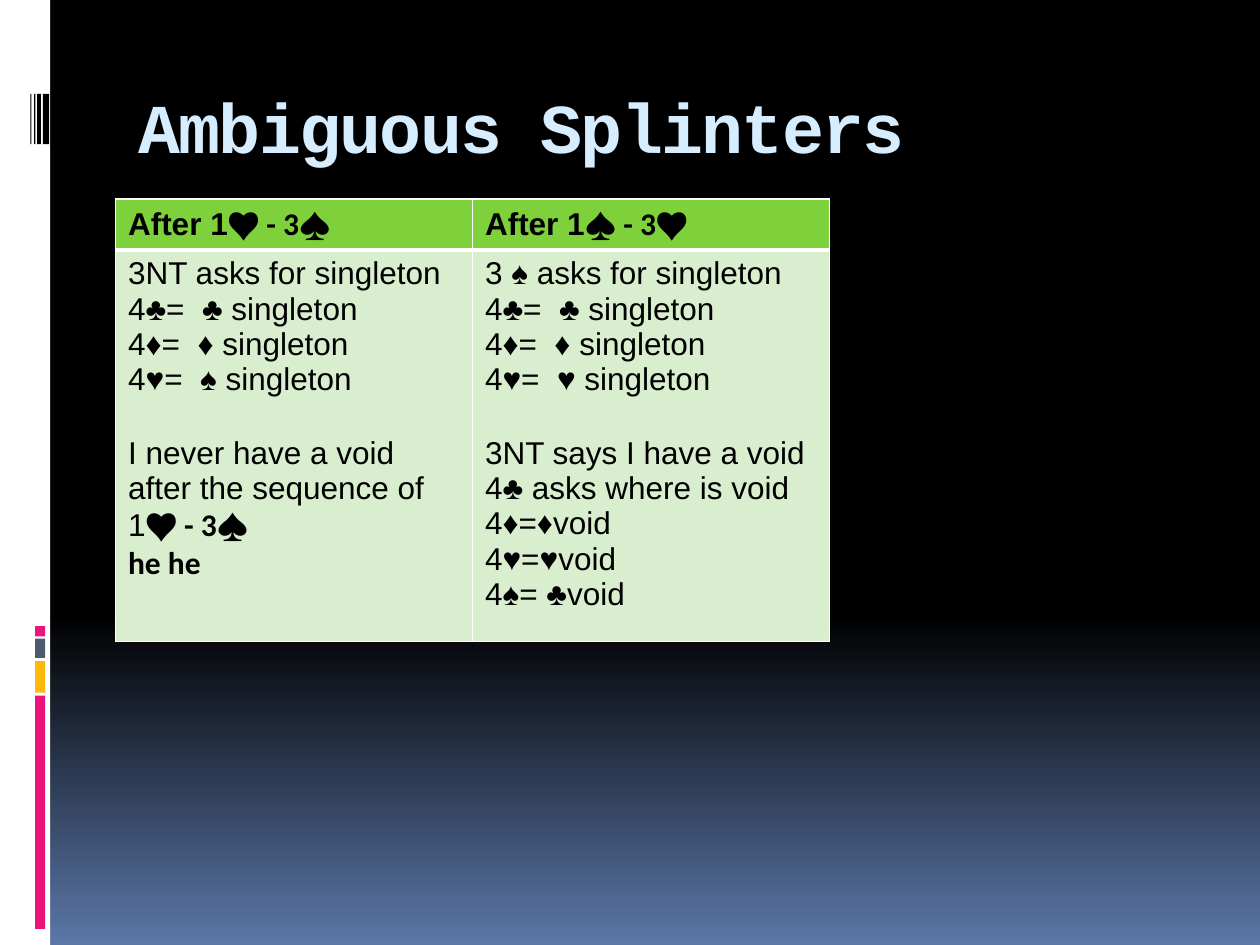
from dataclasses import dataclass

from lxml.etree import SubElement as Sub
from pptx import Presentation
from pptx.dml.color import RGBColor as RGB
from pptx.enum.shapes import MSO_SHAPE as Shape
from pptx.enum.text import MSO_ANCHOR as Anchor
from pptx.oxml.ns import qn
from pptx.util import Pt


@dataclass(frozen=True)
class Theme:
    black: str = "000000"
    white: str = "FFFFFF"
    blue: str = "5B77A8"
    pale: str = "D6ECFF"
    pink: str = "EA157A"
    gold: str = "FEB80A"
    slate: str = "4E5B6F"
    head: str = "7FD13B"
    body: str = "D8EECE"
    big: int = 40
    base: int = 18
    mono: str = "Courier New"
    sans: str = "Arial"
    alt: str = "Calibri"


def write(para, text, font, size, color, bold=False, track=0):
    run = para.add_run()
    run.text = text
    run.font.name = font
    run.font.size = Pt(size)
    run.font.bold = bold
    run.font.color.rgb = RGB.from_string(color)
    if track:
        run.font._element.set("spc", str(track * 100))


class Deck:
    def __init__(self, theme):
        self.theme = theme
        self.file = Presentation()
        self.file.slide_width, self.file.slide_height = Pt(720), Pt(540)
        self.slide = self.file.slides.add_slide(self.file.slide_layouts[6])
        self.shapes = self.slide.shapes

    def back(self, top, low, start):
        fill = self.slide.background.fill
        fill.gradient()
        fill.gradient_angle = 270
        for stop, color, pos in zip(fill.gradient_stops, (top, low), (start, 1)):
            stop.color.rgb = RGB.from_string(color)
            stop.position = pos

    def bar(self, x, y, w, h, color):
        bar = self.shapes.add_shape(Shape.RECTANGLE, Pt(x), Pt(y), Pt(w), Pt(h))
        bar.shadow.inherit = False
        bar.fill.solid()
        bar.fill.fore_color.rgb = RGB.from_string(color)
        bar.line.fill.background()

    def title(self, x, y, w, h, text):
        frame = self.shapes.add_textbox(Pt(x), Pt(y), Pt(w), Pt(h)).text_frame
        frame.word_wrap = True
        frame.vertical_anchor = Anchor.MIDDLE
        t = self.theme
        write(frame.paragraphs[0], text, font=t.mono, size=t.big,
              color=t.pale, bold=True, track=-1)

    def cell(self, cell, paras, head):
        """Each paragraph is a list of (text, is_alt); None leaves a gap."""
        t = self.theme
        frame = cell.text_frame
        para, gap = frame.paragraphs[0], 0
        for i, runs in enumerate(paras):
            if runs is None:
                gap = 22
                continue
            if i:
                para = frame.add_paragraph()
            para.space_before, gap = Pt(gap), 0
            for text, alt in runs:
                write(para, text, font=t.alt if alt else t.sans, size=t.base,
                      color=t.black, bold=head or alt)
        # Borders come before the fill in the cell properties
        props = cell._tc.get_or_add_tcPr()
        for side in "LRTB":
            wide = 3 if (head and side == "B") or (not head and side == "T") else 1
            line = Sub(props, qn(f"a:ln{side}"), w=str(Pt(wide)))
            Sub(Sub(line, qn("a:solidFill")), qn("a:srgbClr"), val=t.white)
        cell.fill.solid()
        cell.fill.fore_color.rgb = RGB.from_string(t.head if head else t.body)

    def table(self, x, y, wide, highs, rows):
        cols = len(rows[0])
        grid = self.shapes.add_table(len(rows), cols, Pt(x), Pt(y),
                                     Pt(wide * cols), Pt(sum(highs))).table
        grid.horz_banding = False
        for r, (high, row) in enumerate(zip(highs, rows)):
            grid.rows[r].height = Pt(high)
            for c, paras in enumerate(row):
                grid.columns[c].width = Pt(wide)
                self.cell(grid.cell(r, c), paras, head=r == 0)


def plain(*lines):
    return [[(line, False)] for line in lines]


def main():
    t = Theme()
    deck = Deck(t)
    deck.back(t.black, t.blue, 0.65)

    # Side strip with its coloured bars and barcode
    deck.bar(0, 0, 28.6, 540, t.white)
    for y, h, color in ((397.5, 133.3, t.pink), (377.8, 18, t.gold),
                        (365, 11, t.slate), (357.8, 5.8, t.pink)):
        deck.bar(20, y, 5.8, h, color)
    for x, w in ((24.5, 3.6), (21.2, 2.2), (19.5, 0.8), (17.4, 0.6)):
        deck.bar(x, 53.6, w, 28.8, t.black)

    deck.title(72, 36, 612, 72, "Ambiguous Splinters")

    # Bids after each opening
    heads = [[[("After 1", False), (rest, True)]] for rest in ("♥ - 3♠", "♠ - 3♥")]
    hearts = [
        *plain("3NT asks for singleton", "4♣=  ♣ singleton",
               "4♦=  ♦ singleton", "4♥=  ♠ singleton"),
        None,
        [("I never have a void after the sequence of 1", False), ("♥ - 3♠", True)],
        [("he he", True)],
    ]
    spades = [
        *plain("3 ♠ asks for singleton", "4♣=  ♣ singleton",
               "4♦=  ♦ singleton", "4♥=  ♥ singleton"),
        None,
        *plain("3NT says I have a void", "4♣ asks where is void",
               "4♦=♦void", "4♥=♥void", "4♠= ♣void"),
    ]
    deck.table(66, 113.8, 204, (29, 221.5), (heads, (hearts, spades)))

    deck.file.save("out.pptx")


if __name__ == "__main__":
    main()
